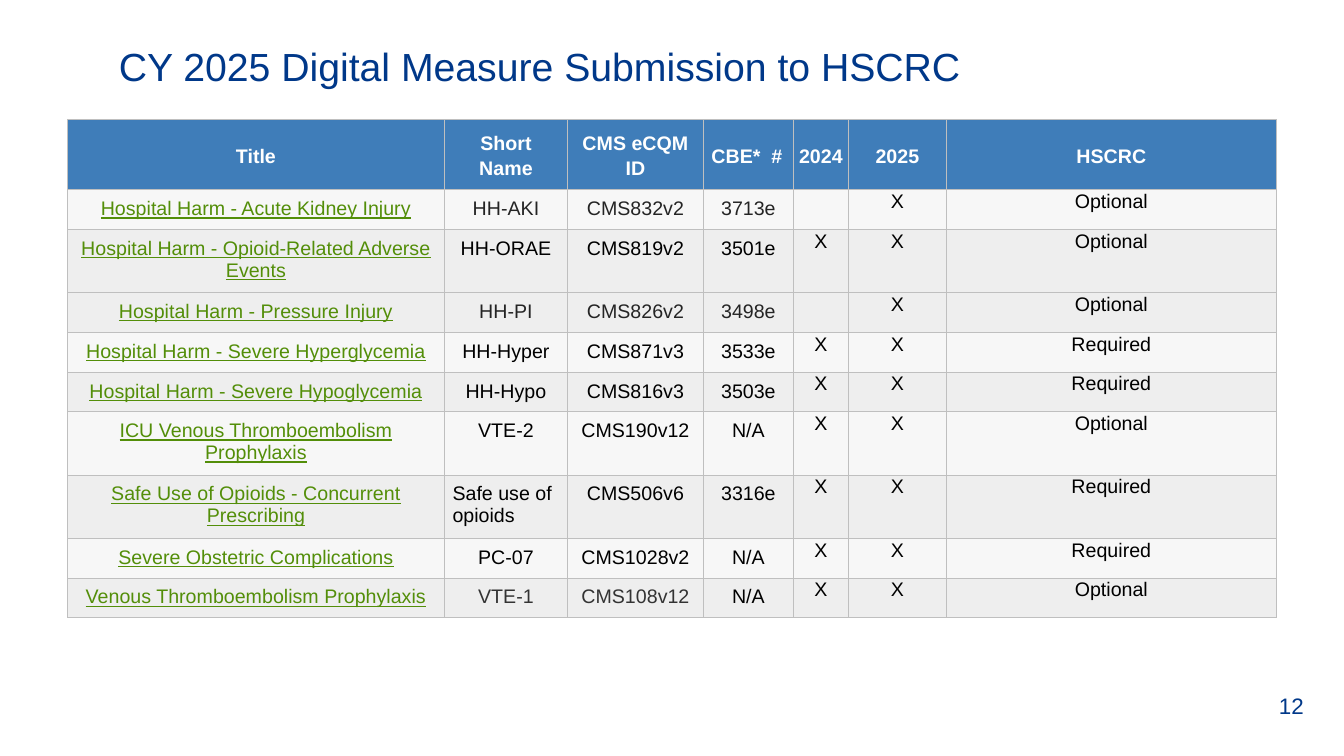
"""Build the digital measure submission slide."""
from dataclasses import dataclass

from lxml import etree
from pptx import Presentation
from pptx import util as u
from pptx.dml.color import RGBColor
from pptx.enum import text as t
from pptx.oxml import ns

Pt = u.Pt
FONT = "Arial"
HUES = {
    "navy": "003889", "head": "3F7DB9", "white": "FFFFFF", "link": "538E09",
    "black": "000000", "ink": "242424", "gray": "333333",
    "light": "F7F7F7", "dark": "EEEEEE", "edge": "BFBFBF",
}
HEADS = ("Title", "Short Name", "CMS eCQM ID", "CBE*  #", "2024", "2025", "HSCRC")
WIDTHS = (269.3, 87.9, 97.1, 64.3, 39.3, 70, 235.7)
HEAD_H, ONE_H, TWO_H = 48.5, 27.6, 43.6
WIDE, THIN = 5.76, 0.72
MID, LEFT = t.PP_ALIGN.CENTER, t.PP_ALIGN.LEFT


@dataclass
class Label:
    text: str
    box: tuple[float, float, float, float]
    size: float
    anchor: t.MSO_ANCHOR


@dataclass
class Measure:
    title: str
    short: str
    code: str
    cbe: str
    old: str
    status: str
    fill: str
    tall: bool = False
    hue: str = "black"
    cbe_hue: str = "black"
    align: t.PP_ALIGN = MID


@dataclass
class Style:
    fill: str
    hue: str
    pad: float
    align: t.PP_ALIGN = MID
    bold: bool = False
    line: bool = False


LABELS = (
    Label("12", (906.5, 489.6, 45.4, 28.8), 16, t.MSO_ANCHOR.MIDDLE),
    Label("CY 2025 Digital Measure Submission to HSCRC",
          (77.8, 26.6, 828, 47.5), 28, t.MSO_ANCHOR.TOP),
)
ROWS = (
    Measure("Hospital Harm - Acute Kidney Injury", "HH-AKI", "CMS832v2", "3713e",
            "", "Optional", "light", hue="ink", cbe_hue="ink"),
    Measure("Hospital Harm - Opioid-Related Adverse Events", "HH-ORAE", "CMS819v2",
            "3501e", "X", "Optional", "dark", tall=True),
    Measure("Hospital Harm - Pressure Injury", "HH-PI", "CMS826v2", "3498e",
            "", "Optional", "dark", hue="ink", cbe_hue="ink"),
    Measure("Hospital Harm - Severe Hyperglycemia", "HH-Hyper", "CMS871v3", "3533e",
            "X", "Required", "light"),
    Measure("Hospital Harm - Severe Hypoglycemia", "HH-Hypo", "CMS816v3", "3503e",
            "X", "Required", "dark"),
    Measure("ICU Venous Thromboembolism Prophylaxis", "VTE-2", "CMS190v12", "N/A",
            "X", "Optional", "light", tall=True),
    Measure("Safe Use of Opioids - Concurrent Prescribing", "Safe use of opioids",
            "CMS506v6", "3316e", "X", "Required", "dark", tall=True, align=LEFT),
    Measure("Severe Obstetric Complications", "PC-07", "CMS1028v2", "N/A",
            "X", "Required", "light"),
    Measure("Venous Thromboembolism Prophylaxis", "VTE-1", "CMS108v12", "N/A",
            "X", "Optional", "dark", hue="gray"),
)


def paint(name: str) -> RGBColor:
    return RGBColor.from_string(HUES[name])


def add_run(para, words: str, size: float, hue: str):
    run = para.add_run()
    run.text = words
    run.font.name = FONT
    run.font.size = Pt(size)
    run.font.color.rgb = paint(hue)
    return run


def add_label(slide, label: Label) -> None:
    frame = slide.shapes.add_textbox(*map(Pt, label.box)).text_frame
    frame.word_wrap = True
    frame.vertical_anchor = label.anchor
    add_run(frame.paragraphs[0], label.text, label.size, "navy")


def add_edges(cell) -> None:
    props = cell._tc.get_or_add_tcPr()
    for side in ("lnL", "lnR", "lnT", "lnB"):
        line = etree.SubElement(props, ns.qn(f"a:{side}"), w=str(Pt(0.75)))
        fill = etree.SubElement(line, ns.qn("a:solidFill"))
        etree.SubElement(fill, ns.qn("a:srgbClr"), val=HUES["edge"])


def fill_cell(cell, words: str, style: Style) -> None:
    add_edges(cell)
    cell.fill.solid()
    cell.fill.fore_color.rgb = paint(style.fill)
    cell.margin_left = cell.margin_right = Pt(style.pad)
    cell.margin_top = cell.margin_bottom = Pt(style.pad)
    cell.vertical_anchor = t.MSO_ANCHOR.MIDDLE if style.bold else t.MSO_ANCHOR.TOP
    para = cell.text_frame.paragraphs[0]
    para.alignment = style.align
    if style.bold:
        para.line_spacing = 1.15
    if words:
        run = add_run(para, words, 14, style.hue)
        run.font.bold = style.bold
        run.font.underline = style.line


def fill_row(table, row: int, item: Measure) -> None:
    table.rows[row].height = Pt(TWO_H if item.tall else ONE_H)
    mark = Style(item.fill, "black", THIN)
    cells = (
        (item.title, Style(item.fill, "link", WIDE, line=True)),
        (item.short, Style(item.fill, item.hue, WIDE, item.align)),
        (item.code, Style(item.fill, item.hue, WIDE)),
        (item.cbe, Style(item.fill, item.cbe_hue, WIDE)),
        (item.old, mark),
        ("X", mark),
        (item.status, mark),
    )
    for col, (words, style) in enumerate(cells):
        fill_cell(table.cell(row, col), words, style)


def add_grid(slide) -> None:
    high = HEAD_H + sum(TWO_H if item.tall else ONE_H for item in ROWS)
    table = slide.shapes.add_table(
        len(ROWS) + 1, len(HEADS), Pt(48.2), Pt(85.5), Pt(sum(WIDTHS)), Pt(high)
    ).table
    table.horz_banding = False
    table.rows[0].height = Pt(HEAD_H)
    for col, (words, width) in enumerate(zip(HEADS, WIDTHS)):
        table.columns[col].width = Pt(width)
        pad = WIDE if col < 4 else THIN
        align = LEFT if col == 3 else MID
        fill_cell(table.cell(0, col), words, Style("head", "white", pad, align, bold=True))
    for row, item in enumerate(ROWS, 1):
        fill_row(table, row, item)


def main() -> None:
    deck = Presentation()
    deck.slide_width, deck.slide_height = Pt(960), Pt(540)
    slide = deck.slides.add_slide(deck.slide_layouts[6])
    for label in LABELS:
        add_label(slide, label)
    add_grid(slide)
    deck.save("out.pptx")


if __name__ == "__main__":
    main()
